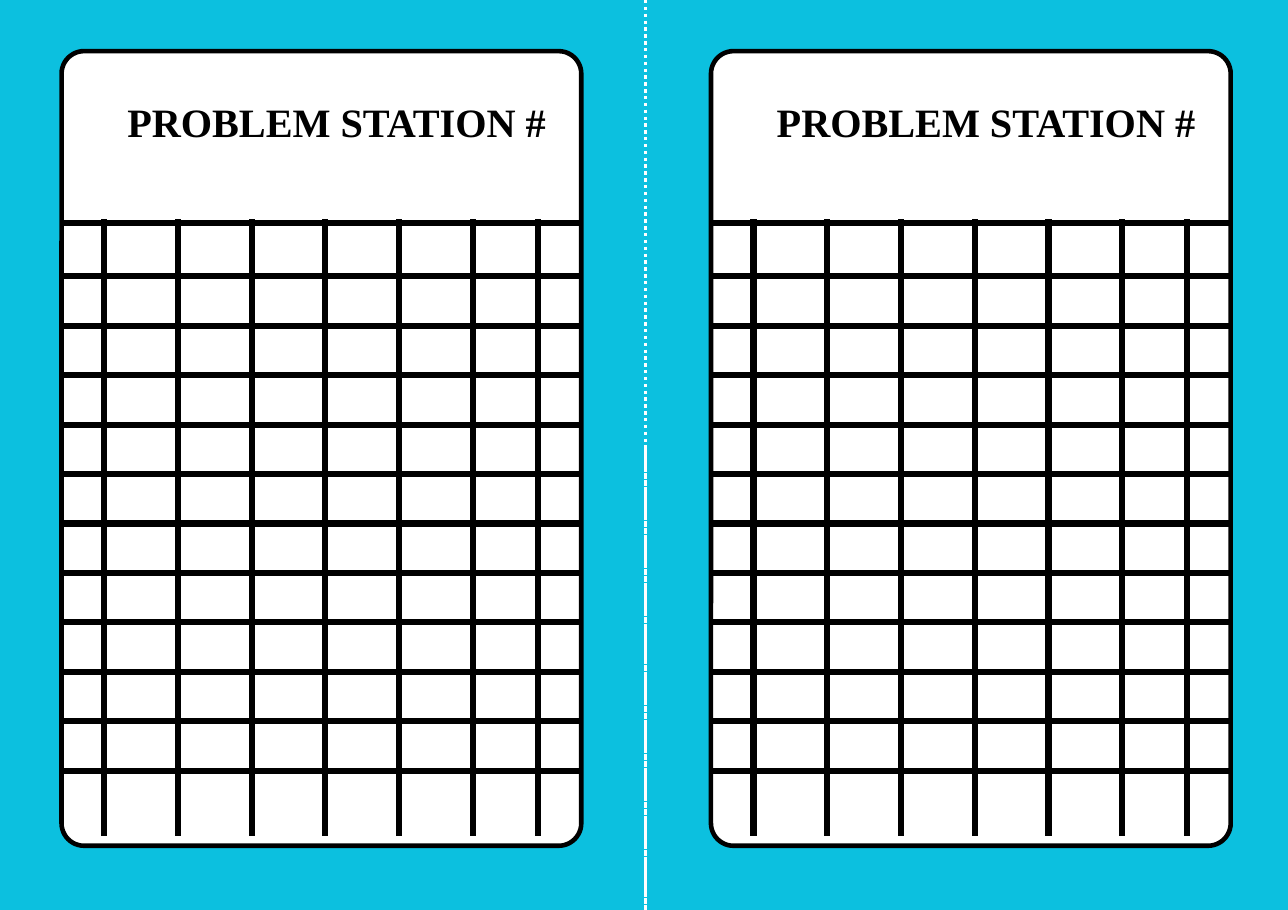
from dataclasses import dataclass

from lxml import etree
from pptx import Presentation
from pptx.dml.color import RGBColor
from pptx.enum.dml import MSO_LINE
from pptx.enum.shapes import MSO_CONNECTOR, MSO_SHAPE
from pptx.enum.text import MSO_ANCHOR, PP_ALIGN
from pptx.oxml.ns import qn
from pptx.util import Cm, Pt

STRAIGHT = MSO_CONNECTOR.STRAIGHT
ROUNDED = MSO_SHAPE.ROUNDED_RECTANGLE
DOTTED = MSO_LINE.ROUND_DOT
TOP = MSO_ANCHOR.TOP
CENTER = PP_ALIGN.CENTER

COLORS = {"background": "0CC0DF", "card": "FFFFFF", "fold": "FFFFFF", "ink": "000000"}
FONT = "Times New Roman"

# All lengths in centimetres
SLIDE_WIDTH, SLIDE_HEIGHT = 29.69, 20.98
FOLD_X = 14.88
FOLD_STARTS = (0, 10.34)
CARD_TOP, CARD_WIDTH, CARD_HEIGHT, CORNER = 1.18, 11.98, 18.32, 0.52
CARD_LEFT, CARD_PITCH = 1.42, 14.97
COLUMN_TOP, COLUMN_BOTTOM = 5.05, 19.27
HEADER_Y, ROW_START, ROW_PITCH = 5.15, 6.37, 1.14
COLUMN_START, COLUMN_PITCH, LAST_COLUMN = 0.98, 1.7, 10.98


@dataclass(frozen=True)
class Rule:
    """A straight line between two points."""
    x1: float
    y1: float
    x2: float
    y2: float


def color(name: str) -> RGBColor:
    return RGBColor.from_string(COLORS[name])


def draw_rule(shapes, rule: Rule, ink: str = "ink", weight: float = 4, dash=None) -> None:
    connector = shapes.add_connector(
        STRAIGHT, Cm(rule.x1), Cm(rule.y1), Cm(rule.x2), Cm(rule.y2))
    connector.line.color.rgb = color(ink)
    connector.line.width = Pt(weight)
    if dash is not None:
        connector.line.dash_style = dash
    etree.SubElement(connector._element.spPr, qn("a:effectLst"))


def add_text(shapes, text: str, *, left: float, top: float, width: float, height: float,
             size: float, line_spacing: float, bold: bool = False) -> None:
    frame = shapes.add_textbox(Cm(left), Cm(top), Cm(width), Cm(height)).text_frame
    frame.word_wrap = True
    frame.vertical_anchor = TOP
    frame.margin_left = frame.margin_right = frame.margin_top = frame.margin_bottom = 0
    paragraph = frame.paragraphs[0]
    paragraph.alignment = CENTER
    paragraph.line_spacing = Pt(line_spacing)
    run = paragraph.add_run()
    run.text = text
    run.font.name = FONT
    run.font.size = Pt(size)
    run.font.bold = bold
    run.font.color.rgb = color("ink")


def grid_rules(left: float) -> list[Rule]:
    right = left + CARD_WIDTH
    row_ys = [HEADER_Y] + [ROW_START + i * ROW_PITCH for i in range(11)]
    rows = [Rule(left + (0.05 if i < 2 else 0), y, right, y) for i, y in enumerate(row_ys)]
    offsets = [COLUMN_START + i * COLUMN_PITCH for i in range(6)] + [LAST_COLUMN]
    columns = [Rule(left + x, COLUMN_BOTTOM, left + x, COLUMN_TOP) for x in offsets]
    return rows + columns


def draw_station_card(slide, left: float) -> None:
    shapes = slide.shapes.add_group_shape().shapes
    # Card outline
    card = shapes.add_shape(ROUNDED, Cm(left), Cm(CARD_TOP), Cm(CARD_WIDTH), Cm(CARD_HEIGHT))
    card.adjustments[0] = CORNER / CARD_WIDTH
    card.shadow.inherit = False
    card.fill.solid()
    card.fill.fore_color.rgb = color("card")
    card.line.color.rgb = color("ink")
    card.line.width = Pt(3)
    # Heading
    add_text(shapes, "PROBLEM STATION #", left=left + 1.35, top=2.31, width=9.98,
             height=2.21, size=26.3, line_spacing=29.9, bold=True)
    # Answer grid
    for rule in grid_rules(left):
        draw_rule(shapes, rule)


def main() -> None:
    deck = Presentation()
    deck.slide_width, deck.slide_height = Cm(SLIDE_WIDTH), Cm(SLIDE_HEIGHT)
    slide = deck.slides.add_slide(deck.slide_layouts[6])
    slide.background.fill.solid()
    slide.background.fill.fore_color.rgb = color("background")

    # Dotted fold line, doubled in the lower half
    for start in FOLD_STARTS:
        draw_rule(slide.shapes, Rule(FOLD_X, start, FOLD_X, SLIDE_HEIGHT),
                  ink="fold", weight=2.25, dash=DOTTED)

    # Two station cards
    for i in range(2):
        draw_station_card(slide, CARD_LEFT + i * CARD_PITCH)

    deck.save("out.pptx")


if __name__ == "__main__":
    main()
